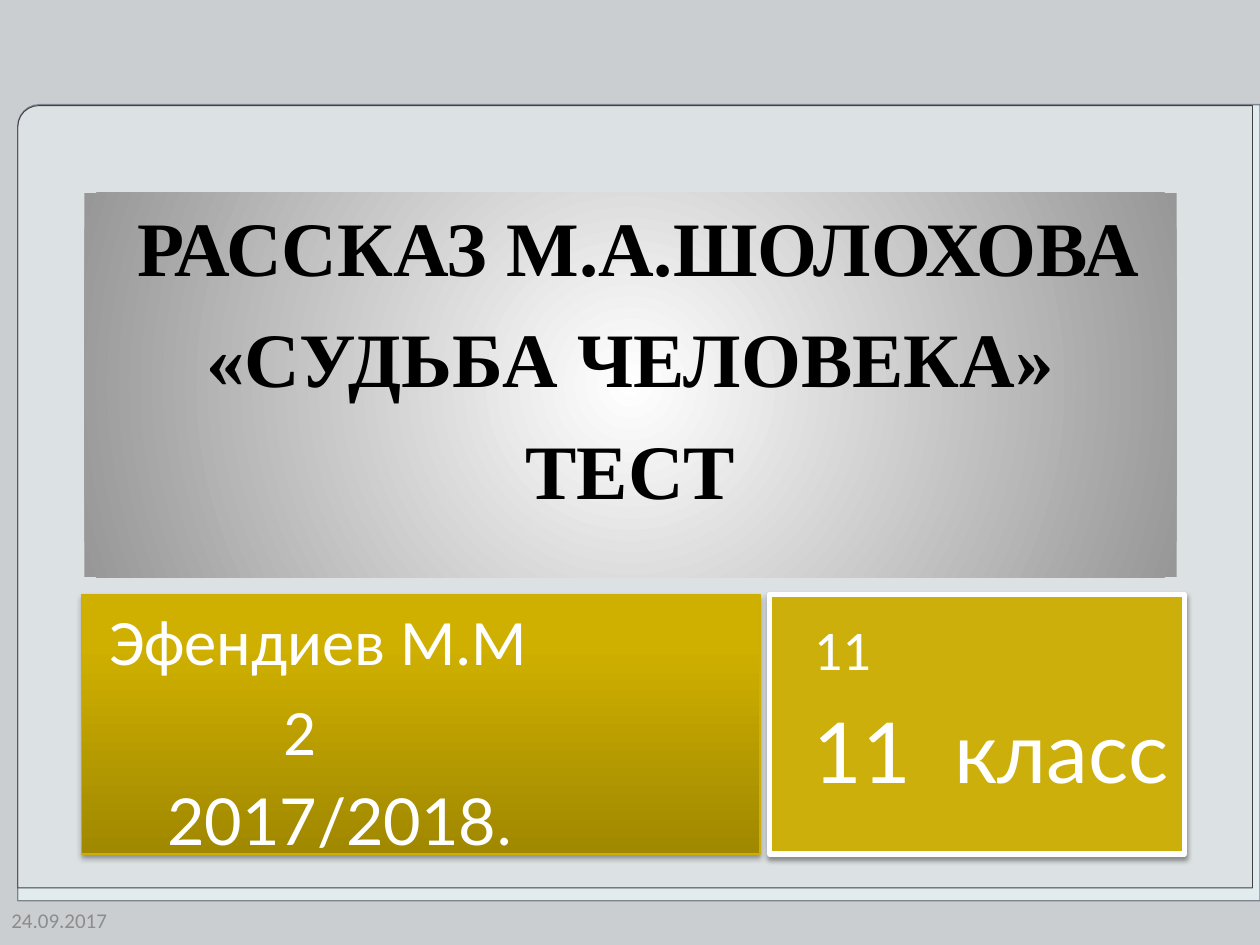
from lxml import etree
from pptx import Presentation
from pptx.dml.color import RGBColor
from pptx.enum.shapes import MSO_SHAPE
from pptx.enum.text import MSO_ANCHOR, MSO_AUTO_SIZE, PP_ALIGN
from pptx.oxml.ns import qn
from pptx.util import Cm, Pt

RECT, ROUND1 = MSO_SHAPE.RECTANGLE, MSO_SHAPE.ROUND_1_RECTANGLE
TOP, MIDDLE = MSO_ANCHOR.TOP, MSO_ANCHOR.MIDDLE
LEFT, CENTER = PP_ALIGN.LEFT, PP_ALIGN.CENTER
NO_FIT = MSO_AUTO_SIZE.NONE
COLORS = {
    "bg": "CBCED1", "sheet": "E2ECEF", "sheet_line": "7E848D",
    "panel": "D8D8D8", "panel_line": "3F4247", "date": "8C8C8C",
    "black": "000000", "white": "FFFFFF", "grey": "979797",
    "gold": "CCAF0A", "gold_line": "CCAE05", "gold_dark": "A08800",
    "gold_mid": "CFB000", "gold_light": "D0B100",
}


def rgb(name):
    """Return the named colour."""
    return RGBColor.from_string(COLORS[name])


def add_child(parent, tag, **attrs):
    """Append a drawing element with its attributes."""
    return etree.SubElement(parent, qn(tag), {k: str(v) for k, v in attrs.items()})


def set_gradient(sp, stops, angle=None):
    """Fill a shape with a linear gradient, or a radial one without an angle."""
    sp.fill.solid()
    spPr = sp._element.spPr
    grad = etree.Element(qn("a:gradFill"), rotWithShape="1")
    gs_list = add_child(grad, "a:gsLst")
    for pos, color in stops:
        gs = add_child(gs_list, "a:gs", pos=pos * 1000)
        add_child(gs, "a:srgbClr", val=COLORS[color])
    if angle is None:
        radial = add_child(grad, "a:path", path="circle")
        add_child(radial, "a:fillToRect", l=50000, t=50000, r=50000, b=50000)
    else:
        add_child(grad, "a:lin", ang=angle * 60000, scaled=0)
    spPr.replace(spPr.find(qn("a:solidFill")), grad)


def set_shadow(sp, alpha):
    """Give a shape a soft shadow below it."""
    sp.shadow.inherit = False
    effects = sp._element.spPr.find(qn("a:effectLst"))
    shadow = add_child(effects, "a:outerShdw", blurRad=Pt(3.1), dist=Pt(1.7),
                       dir=5400000, rotWithShape=0)
    color = add_child(shadow, "a:srgbClr", val=COLORS["black"])
    add_child(color, "a:alpha", val=alpha * 1000)


def add_box(s, kind, box, fill, line, width):
    """Add a filled and outlined shape in a box given in centimetres."""
    sp = s.shapes.add_shape(kind, *map(Cm, box))
    sp.shadow.inherit = False
    sp.fill.solid()
    sp.fill.fore_color.rgb = rgb(fill)
    sp.line.color.rgb = rgb(line)
    sp.line.width = Pt(width)
    return sp


def write(tf, p, text, size, font="Calibri", color="white", bold=False,
          align=LEFT, before=0, indent=0):
    """Write formatted text into a paragraph of a wrapped frame."""
    tf.word_wrap = True
    tf.auto_size = NO_FIT
    p.alignment = align
    p.space_before = Pt(before)
    p._p.get_or_add_pPr().set("marL", str(Cm(indent)))
    r = p.add_run()
    r.text = text
    r.font.size, r.font.name, r.font.bold = Pt(size), font, bold
    r.font.color.rgb = rgb(color)


def write_lines(tf, lines, **common):
    """Write one paragraph for each text and its own format."""
    tf.vertical_anchor = TOP
    for i, (text, extra) in enumerate(lines):
        p = tf.add_paragraph() if i else tf.paragraphs[0]
        write(tf, p, text, **{**common, **extra})


def add_backdrop(s, x, y, w, h):
    """Draw the two stacked sheets with a rounded upper left corner."""
    sheet = add_box(s, ROUND1, (x, y, w, h), "sheet", "sheet_line", 0.75)
    panel = add_box(s, ROUND1, (x, y + 0.02, w - 0.15, h - 0.28),
                    "panel", "panel_line", 0.5)
    color = panel._element.spPr.find(qn("a:solidFill"))[0]
    add_child(color, "a:alpha", val=50000)
    for sp in (sheet, panel):
        sp.adjustments[0] = 0.027
        sp._element.spPr.find(qn("a:xfrm")).set("flipH", "1")


def add_title(s, x, y, w, h):
    """Place the title on a radial grey panel."""
    title = s.shapes.title
    title.left, title.top, title.width, title.height = map(Cm, (x, y, w, h))
    s.shapes._spTree.append(title._element)
    set_gradient(title, [(0, "white"), (100, "grey")])
    lines = [("РАССКАЗ М.А.ШОЛОХОВА", {"indent": 0.32}),
             ("«СУДЬБА ЧЕЛОВЕКА»", {}), ("ТЕСТ", {})]
    write_lines(title.text_frame, lines, size=44, font="Times New Roman",
                color="black", bold=True, align=CENTER, before=11)


def add_author(s, x, y, w, h):
    """Place the author and school year on a gold gradient."""
    sp = add_box(s, RECT, (x, y, w, h), "gold", "gold_line", 0.75)
    set_gradient(sp, [(0, "gold_dark"), (80, "gold_mid"), (100, "gold_light")], 270)
    set_shadow(sp, 35)
    tf = sp.text_frame
    lines = [("Эфендиев М.М", {"indent": 0.3}), ("2", {"indent": 3.82}),
             ("2017/2018", {"indent": 1.47, "font": "Lato"})]
    write_lines(tf, lines, size=37, before=7)
    write(tf, tf.paragraphs[-1], ".", 37, before=7, indent=1.47)


def add_grade(s, x, y, w, h):
    """Place the school grade on a gold box with a white frame."""
    sp = add_box(s, RECT, (x, y, w, h), "gold", "white", 3)
    set_shadow(sp, 38)
    tf = sp.text_frame
    tf.margin_top = Cm(0.4)
    write_lines(tf, [("11", {"size": 32}),
                     ("11  класс", {"size": 48, "font": "Lato", "before": 10})],
                indent=0.64)


def add_date(s, x, y, w, h):
    """Place the date in the lower left corner."""
    tf = s.shapes.add_textbox(*map(Cm, (x, y, w, h))).text_frame
    tf.vertical_anchor = MIDDLE
    write(tf, tf.paragraphs[0], "24.09.2017", 12, color="date")


def main():
    """Build the slide and save it."""
    prs = Presentation()
    prs.slide_width, prs.slide_height = Cm(25.4), Cm(19.05)
    s = prs.slides.add_slide(prs.slide_layouts[5])
    s.background.fill.solid()
    s.background.fill.fore_color.rgb = rgb("bg")
    add_backdrop(s, 0.36, 2.11, 25.04, 16.05)
    add_date(s, -0.02, 18.03, 2.97, 1.02)
    add_title(s, 1.7, 3.89, 22.02, 7.75)
    add_author(s, 1.65, 11.99, 13.67, 5.23)
    add_grade(s, 15.52, 11.99, 8.36, 5.23)
    prs.save("out.pptx")


if __name__ == "__main__":
    main()
